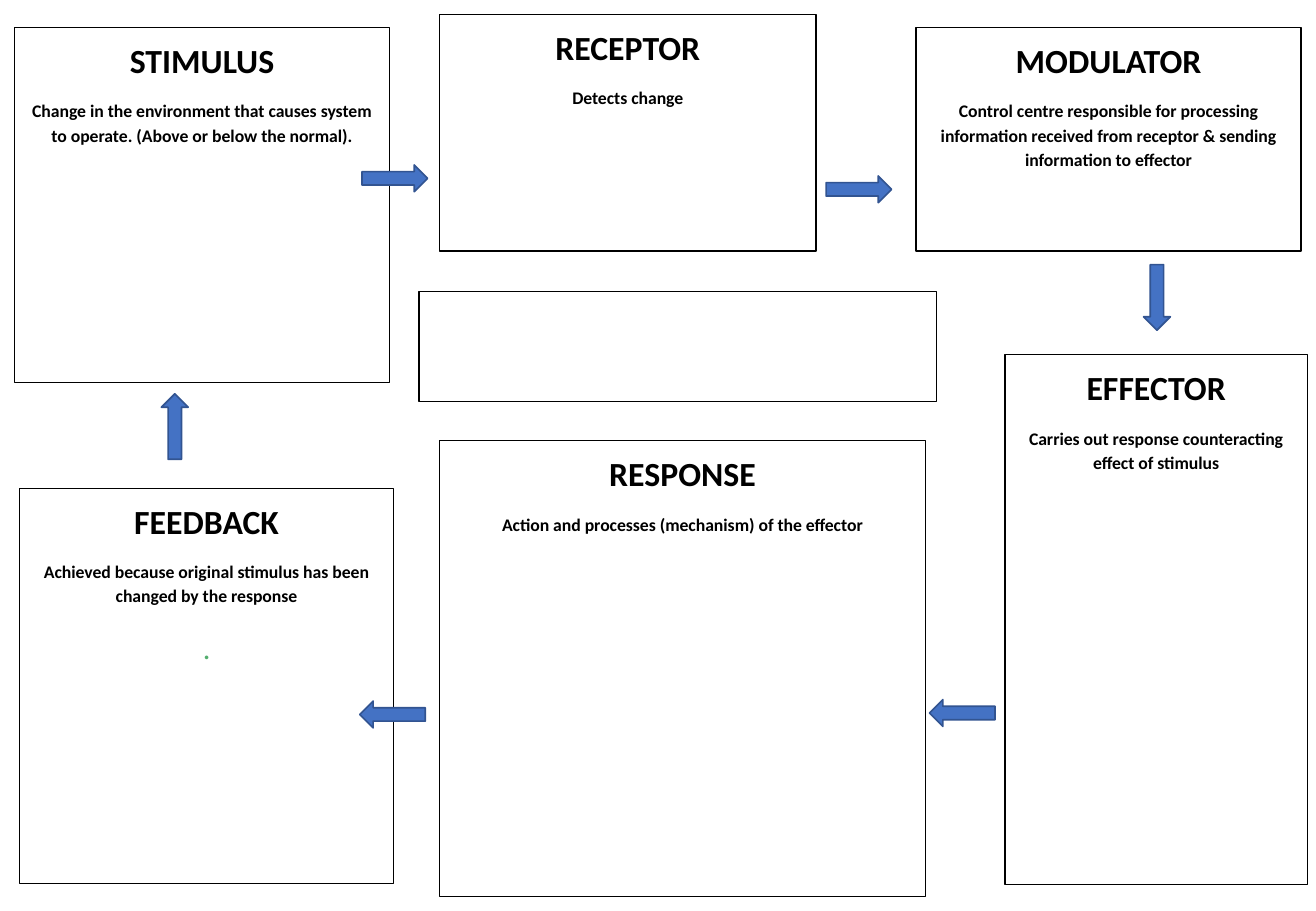
from dataclasses import dataclass

from pptx import Presentation
from pptx.dml.color import RGBColor
from pptx.enum.shapes import MSO_SHAPE
from pptx.enum.text import MSO_ANCHOR, PP_ALIGN
from pptx.shapes.autoshape import Shape
from pptx.slide import Slide
from pptx.text.text import TextFrame
from pptx.util import Cm, Pt

BLACK, WHITE, BLUE, DARK_BLUE, GREEN = "000000", "FFFFFF", "4472C4", "325491", "53AE6E"
ARROW_LENGTH, ARROW_THICKNESS = 1.37, 0.56

FRAME_FORMAT = {"word_wrap": True, "vertical_anchor": MSO_ANCHOR.TOP}
PARAGRAPH_FORMAT = {
    "alignment": PP_ALIGN.CENTER,
    "line_spacing": 1.15,
    "space_after": Pt(10),
}
HEADING_FORMAT = {"name": "Calibri", "size": Pt(20), "bold": True}
BODY_FORMAT = {"name": "Calibri", "size": Pt(10.5), "bold": True}
DOT_FORMAT = {"name": "Calibri", "size": Pt(18), "bold": False}


@dataclass
class Stage:
    left: float
    top: float
    width: float
    height: float
    heading: str = ""
    body: str = ""
    dot: str = ""


@dataclass
class Arrow:
    left: float
    top: float
    rotation: int = 0


STAGES = [
    Stage(0.3, 0.58, 7.85, 7.42, "STIMULUS",
          "Change in the environment that causes system to operate. "
          "(Above or below the normal)."),
    Stage(9.19, 0.3, 7.87, 4.95, "RECEPTOR", "Detects change"),
    Stage(19.15, 0.58, 8.05, 4.67, "MODULATOR",
          "Control centre responsible for processing information received "
          "from receptor & sending information to effector"),
    Stage(21.01, 7.42, 6.32, 11.07, "EFFECTOR",
          "Carries out response counteracting effect of stimulus"),
    Stage(9.19, 9.22, 10.16, 9.53, "RESPONSE",
          "Action and processes (mechanism) of the effector"),
    Stage(0.41, 10.21, 7.82, 8.26, "FEEDBACK",
          "Achieved because original stimulus has been changed by the response", "."),
    Stage(8.76, 6.1, 10.82, 2.29),
]

ARROWS = [
    Arrow(7.57, 3.45),
    Arrow(17.27, 3.68),
    Arrow(23.5, 5.94, 90),
    Arrow(19.43, 14.63, 180),
    Arrow(7.52, 14.66, 180),
    Arrow(2.97, 8.64, 270),
]


def colour(hex_value: str) -> RGBColor:
    return RGBColor.from_string(hex_value)


def apply_format(target: object, values: dict) -> None:
    for name, value in values.items():
        setattr(target, name, value)


def paint(shape: Shape, fill: str, line: str, line_width: float) -> None:
    shape.shadow.inherit = False
    shape.fill.solid()
    shape.fill.fore_color.rgb = colour(fill)
    shape.line.color.rgb = colour(line)
    shape.line.width = Pt(line_width)


def write_lines(frame: TextFrame, lines: list[tuple[str, dict, str]]) -> None:
    """Write each text with its font format and colour as a paragraph."""
    apply_format(frame, FRAME_FORMAT)
    for index, (text, font_format, text_colour) in enumerate(lines):
        para = frame.add_paragraph() if index else frame.paragraphs[0]
        apply_format(para, PARAGRAPH_FORMAT)
        span = para.add_run()
        span.text = text
        apply_format(span.font, font_format)
        span.font.color.rgb = colour(text_colour)


def draw_stage(page: Slide, stage: Stage) -> None:
    box = page.shapes.add_shape(
        MSO_SHAPE.RECTANGLE,
        Cm(stage.left), Cm(stage.top), Cm(stage.width), Cm(stage.height),
    )
    paint(box, WHITE, BLACK, 0.75)
    lines = [
        (stage.heading, HEADING_FORMAT, BLACK),
        (stage.body, BODY_FORMAT, BLACK),
        (stage.dot, DOT_FORMAT, GREEN),
    ]
    write_lines(box.text_frame, [line for line in lines if line[0]])


def draw_arrow(page: Slide, arrow: Arrow) -> None:
    shape = page.shapes.add_shape(
        MSO_SHAPE.RIGHT_ARROW,
        Cm(arrow.left), Cm(arrow.top), Cm(ARROW_LENGTH), Cm(ARROW_THICKNESS),
    )
    shape.rotation = arrow.rotation
    paint(shape, BLUE, DARK_BLUE, 1)


def main() -> None:
    deck = Presentation()
    deck.slide_width, deck.slide_height = Cm(27.51), Cm(19.05)
    page = deck.slides.add_slide(deck.slide_layouts.get_by_name("Blank"))
    for stage in STAGES:
        draw_stage(page, stage)
    for arrow in ARROWS:
        draw_arrow(page, arrow)
    deck.save("out.pptx")


if __name__ == "__main__":
    main()
